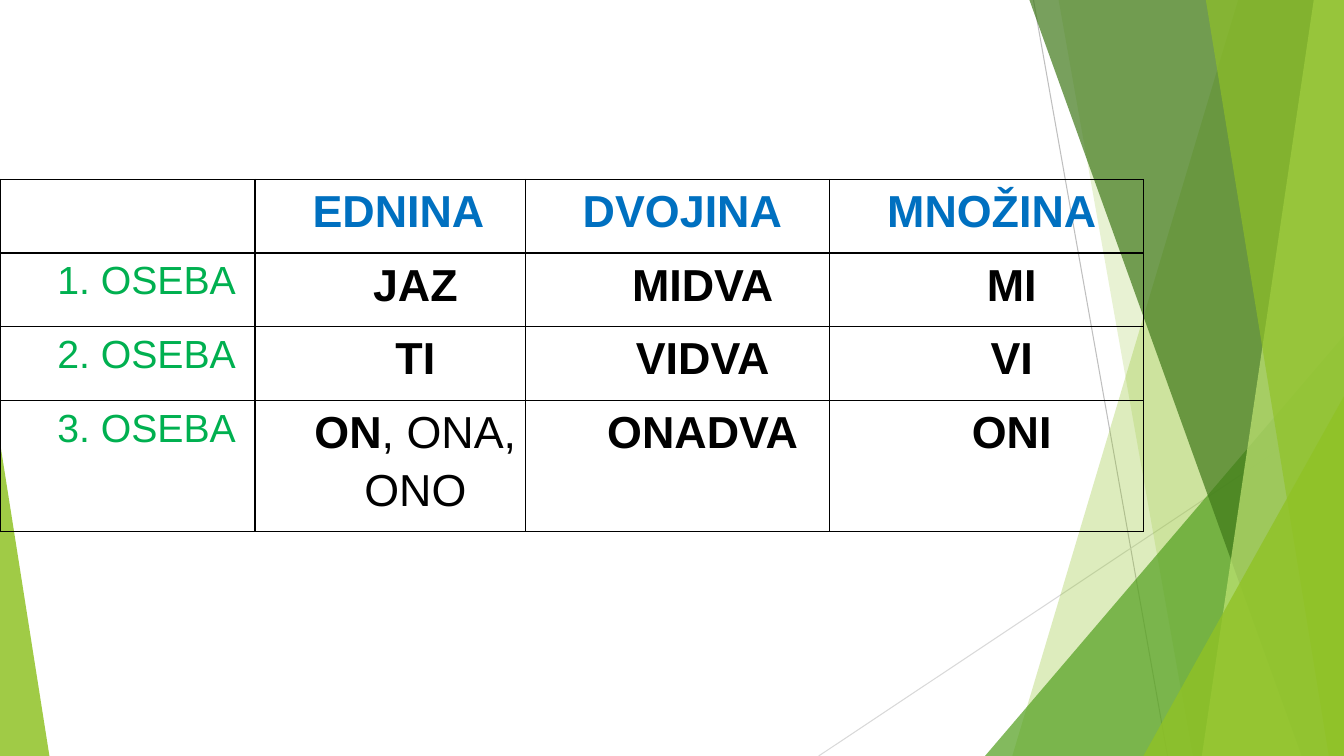
from lxml.etree import SubElement
from pptx import Presentation
from pptx.dml.color import RGBColor
from pptx.enum.shapes import MSO_CONNECTOR, MSO_SHAPE
from pptx.enum.text import PP_ALIGN
from pptx.oxml.ns import qn
from pptx.util import Inches, Pt

COLORS = {
    "lime": "90C226", "green": "54A021", "dark": "3F7819", "pale": "C0E474",
    "gray": "BFBFBF", "light_gray": "D9D9D9",
    "number": "0070C0", "person": "00B050", "black": "000000",
}
WIDTH, HEIGHT = 13.33, 7.5


def style_facet(shape, color, opacity):
    shape.shadow.inherit = False
    shape.line.fill.background()
    shape.fill.solid()
    shape.fill.fore_color.rgb = RGBColor.from_string(COLORS[color])
    color_element = shape._element.spPr.find(qn("a:solidFill"))[0]
    SubElement(color_element, qn("a:alpha"), val=str(opacity * 1000))


def add_text(paragraph, text, size=32, color="black", bold=True, align=PP_ALIGN.CENTER):
    paragraph.alignment = align
    paragraph.line_spacing = 1.15
    paragraph.space_after = Pt(10)
    paragraph._p.get_or_add_pPr().set("marL", str(Inches(0.5)))
    run = paragraph.add_run()
    run.text = text
    run.font.name = "Arial"
    run.font.size = Pt(size)
    run.font.bold = bold
    run.font.color.rgb = RGBColor.from_string(COLORS[color])


presentation = Presentation()
presentation.slide_width = Inches(WIDTH)
presentation.slide_height = Inches(HEIGHT)
slide = presentation.slides.add_slide(presentation.slide_layouts[6])

# Thin background lines
for x1, y1, x2, y2, color in [
    (10.25, 0, 11.58, HEIGHT, "gray"),
    (WIDTH, 4.03, 8.12, HEIGHT, "light_gray"),
]:
    line = slide.shapes.add_connector(
        MSO_CONNECTOR.STRAIGHT, Inches(x1), Inches(y1), Inches(x2), Inches(y2))
    line.line.color.rgb = RGBColor.from_string(COLORS[color])
    line.line.width = Pt(0.75)
    SubElement(line._element.spPr, qn("a:effectLst"))

# Facets: bands reach the right edge (top x, bottom x),
# triangles reach the bottom edge (left, top, width, apex)
for kind, geometry, color, opacity in [
    ("band", (12.28, 10.04), "lime", 30),
    ("band", (10.5, 11.83), "lime", 20),
    ("triangle", (9.77, 3.33, 3.56, 1), "green", 72),
    ("band", (10.21, 12.91), "dark", 70),
    ("band", (13.03, 11.92), "pale", 70),
    ("band", (11.96, 13.18), "lime", 65),
    ("triangle", (11.34, 3.93, 1.99, 1), "lime", 80),
    ("triangle", (0, 4.39, 0.49, 0), "lime", 85),
]:
    if kind == "band":
        top_x, bottom_x = geometry
        builder = slide.shapes.build_freeform(Inches(top_x), 0)
        corners = [(WIDTH, 0), (WIDTH, HEIGHT), (bottom_x, HEIGHT)]
        builder.add_line_segments([(Inches(x), Inches(y)) for x, y in corners], close=True)
        facet = builder.convert_to_shape()
    else:
        left, top, width, apex = geometry
        facet = slide.shapes.add_shape(
            MSO_SHAPE.ISOSCELES_TRIANGLE,
            Inches(left), Inches(top), Inches(width), Inches(HEIGHT - top))
        facet.adjustments[0] = apex
    style_facet(facet, color, opacity)

# Pronoun table
rows = [
    ["", "EDNINA", "DVOJINA", "MNOŽINA"],
    ["1. OSEBA", "JAZ", "MIDVA", "MI"],
    ["2. OSEBA", "TI", "VIDVA", "VI"],
    ["3. OSEBA", "ON", "ONADVA", "ONI"],
]
column_widths = [2.53, 2.68, 3.02, 3.11]
row_heights = [0.73, 0.73, 0.73, 1.3]
table = slide.shapes.add_table(
    len(rows), len(column_widths), 0, Inches(1.78),
    Inches(sum(column_widths)), Inches(sum(row_heights))).table
table.first_row = table.horz_banding = False
for column, width in zip(table.columns, column_widths):
    column.width = Inches(width)
for row, height in zip(table.rows, row_heights):
    row.height = Inches(height)

for row_index, texts in enumerate(rows):
    for column_index, text in enumerate(texts):
        cell = table.cell(row_index, column_index)
        cell.margin_left = cell.margin_right = Inches(0.07)
        cell.margin_top = cell.margin_bottom = 0
        properties = cell._tc.get_or_add_tcPr()
        for side in ("lnL", "lnR", "lnT", "lnB"):
            border = SubElement(properties, qn(f"a:{side}"), w=str(Pt(1)))
            fill = SubElement(border, qn("a:solidFill"))
            SubElement(fill, qn("a:srgbClr"), val=COLORS["black"])
        cell.fill.background()
        paragraph = cell.text_frame.paragraphs[0]
        if not text:
            continue
        if row_index == 0:
            add_text(paragraph, text, color="number", align=PP_ALIGN.LEFT)
        elif column_index == 0:
            add_text(paragraph, text, size=28, color="person", bold=False, align=PP_ALIGN.LEFT)
        else:
            add_text(paragraph, text)

# Feminine and neuter forms follow in regular weight
add_text(table.cell(3, 1).text_frame.paragraphs[0], ", ONA, ONO", bold=False)

presentation.save("out.pptx")
